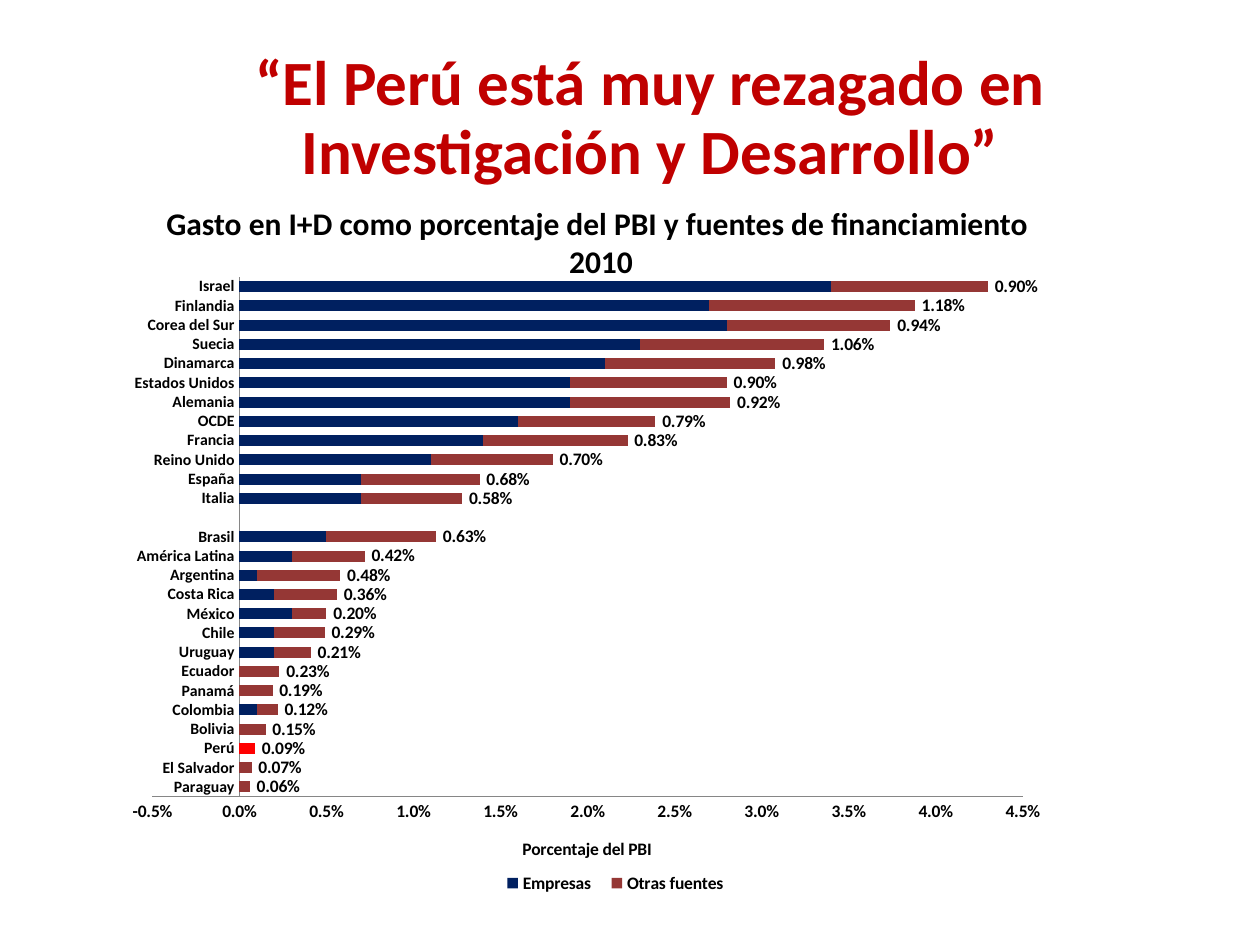
import pptx
import pptx.chart.data
import pptx.dml.color
import pptx.enum.chart
import pptx.enum.text
import pptx.oxml
import pptx.oxml.ns
import pptx.util

Inches = pptx.util.Inches
Pt = pptx.util.Pt
qn = pptx.oxml.ns.qn

ROWS = [
    ("Paraguay", 0.06, 0.06), ("El Salvador", 0.07, 0.07), ("Perú", 0.11, 0.09),
    ("Bolivia", 0.16, 0.15), ("Colombia", 0.19, 0.12), ("Panamá", 0.19, 0.19),
    ("Ecuador", 0.25, 0.23), ("Uruguay", 0.40, 0.21), ("Chile", 0.45, 0.29),
    ("México", 0.48, 0.20), ("Costa Rica", 0.54, 0.36), ("Argentina", 0.62, 0.48),
    ("América Latina", 0.76, 0.42), ("Brasil", 1.16, 0.63), ("", None, None),
    ("Italia", 1.26, 0.58), ("España", 1.40, 0.68), ("Reino Unido", 1.80, 0.70),
    ("Francia", 2.24, 0.83), ("OCDE", 2.37, 0.79), ("Alemania", 2.80, 0.92),
    ("Estados Unidos", 2.83, 0.90), ("Dinamarca", 3.07, 0.98), ("Suecia", 3.39, 1.06),
    ("Corea del Sur", 3.74, 0.94), ("Finlandia", 3.90, 1.18), ("Israel", 4.34, 0.90),
]
PLOT = {"x": 0.04, "y": 0.019, "w": 0.921, "h": 0.787}
AXIS_MIN, AXIS_MAX, AXIS_STEP = -0.005, 0.045, 0.005
LABEL_SHIFT = 0.03
LEADER_EXT = (
    f'<c:extLst {pptx.oxml.ns.nsdecls("c")}>'
    '<c:ext uri="{CE6537A1-D6FC-4f65-9D91-7224C49458BB}" '
    'xmlns:c15="http://schemas.microsoft.com/office/drawing/2012/chart">'
    '<c15:showLeaderLines val="0"/></c:ext></c:extLst>')


def rgb(value):
    return pptx.dml.color.RGBColor.from_string(value)


def share(percent, digits):
    return None if percent is None else round(percent / 100, digits)


def place(parent, before, inner=False, **box):
    for old in parent.findall(qn("c:layout")):
        parent.remove(old)
    modes = '<c:layoutTarget val="inner"/>' if inner else ""
    if before != "c:idx":
        modes += '<c:xMode val="edge"/><c:yMode val="edge"/>'
    sizes = "".join(f'<c:{key} val="{val}"/>' for key, val in box.items())
    layout = pptx.oxml.parse_xml(
        f'<c:layout {pptx.oxml.ns.nsdecls("c")}><c:manualLayout>{modes}{sizes}'
        "</c:manualLayout></c:layout>")
    if before is None:
        parent.insert(0, layout)
    else:
        parent.find(qn(before)).addnext(layout)


class Deck:
    font = "Calibri"
    black = "000000"
    grey = "868686"

    def __init__(self):
        self.prs = pptx.Presentation()
        self.prs.slide_width, self.prs.slide_height = Inches(10), Inches(7.5)
        self.s = self.prs.slides.add_slide(self.prs.slide_layouts[6])

    def style(self, font, size, color):
        font.name, font.size, font.bold = self.font, Pt(size), True
        font.color.rgb = rgb(color)

    def text(self, box, text, size, color, spacing=1.0):
        tf = self.s.shapes.add_textbox(*map(Inches, box)).text_frame
        tf.word_wrap = True
        tf.text = text
        for p in tf.paragraphs:
            p.alignment = pptx.enum.text.PP_ALIGN.CENTER
            p.line_spacing = spacing
            for r in p.runs:
                self.style(r.font, size, color)

    def axis(self, axis, size):
        axis.has_major_gridlines = False
        axis.major_tick_mark = axis.minor_tick_mark = pptx.enum.chart.XL_TICK_MARK.NONE
        axis.format.line.color.rgb = rgb(self.grey)
        axis.format.line.width = Pt(0.75)
        self.style(axis.tick_labels.font, size, self.black)

    def series(self, ser, color, accent, accent_idx):
        for fmt, fill in ((ser.format, color), (ser.points[accent_idx].format, accent)):
            fmt.fill.solid()
            fmt.fill.fore_color.rgb = rgb(fill)
        ser.invert_if_negative = False

    def end_labels(self, ser):
        labels = ser.data_labels
        labels.show_value = True
        labels.number_format, labels.number_format_is_linked = "0.00%", False
        self.style(labels.font, 10, self.black)
        dLbls = ser._element.find(qn("c:dLbls"))
        for i, value in enumerate(ser.values):
            if value is None:
                continue
            self.style(ser.points[i].data_label.font, 10, self.black)
            half_bar = value / (AXIS_MAX - AXIS_MIN) * PLOT["w"] / 2
            place(dLbls.findall(qn("c:dLbl"))[-1], "c:idx",
                  x=round(half_bar + LABEL_SHIFT, 4), y=0)
        for lines in dLbls.findall(qn("c:showLeaderLines")):
            lines.set("val", "0")
        dLbls.append(pptx.oxml.parse_xml(LEADER_EXT))

    def stacked_bars(self, box, rows, axis_title):
        data = pptx.chart.data.CategoryChartData(number_format="0.00%")
        data.categories = [name for name, _, _ in rows]
        data.add_series("Empresas", [share(total and total - other, 3)
                                     for _, total, other in rows])
        data.add_series("Otras fuentes", [share(other, 4) for _, _, other in rows])
        chart = self.s.shapes.add_chart(pptx.enum.chart.XL_CHART_TYPE.BAR_STACKED,
                                        *map(Inches, box), data).chart
        self.style(chart.font, 10, self.black)
        chart.has_title = False
        plot = chart.plots[0]
        plot.gap_width, plot.overlap, plot.vary_by_categories = 75, 100, False
        place(chart._chartSpace.chart.plotArea, None, inner=True, **PLOT)

        peru = [name for name, _, _ in rows].index("Perú")
        companies, others = plot.series
        self.series(companies, "002060", "00B0F0", peru)
        self.series(others, "953735", "FF0000", peru)
        self.end_labels(others)

        self.axis(chart.category_axis, 9)
        axis = chart.value_axis
        self.axis(axis, 10)
        axis.minimum_scale, axis.maximum_scale, axis.major_unit = AXIS_MIN, AXIS_MAX, AXIS_STEP
        axis.tick_labels.number_format = "0.0%"
        axis.tick_labels.number_format_is_linked = False
        tf = axis.axis_title.text_frame
        tf.text = axis_title
        self.style(tf.paragraphs[0].runs[0].font, 10, self.black)
        place(axis.axis_title._element, "c:tx", x=0.428, y=0.863)

        chart.has_legend = True
        legend = chart.legend
        legend.position = pptx.enum.chart.XL_LEGEND_POSITION.BOTTOM
        legend.include_in_layout = False
        self.style(legend.font, 10, self.black)
        place(legend._element, "c:legendPos", x=0.4, y=0.912, w=0.26, h=0.05)


def main():
    deck = Deck()
    deck.text((0.75, 0.36, 8.82, 1.19),
              "“El Perú está muy rezagado en Investigación y Desarrollo”", 36, "C00000", 0.9)
    deck.stacked_bars((0.91, 2.1, 7.5, 5.24), ROWS, "Porcentaje del PBI")
    deck.text((0.92, 1.57, 7.7, 0.71),
              "Gasto en I+D como porcentaje del PBI y fuentes de financiamiento \n2010",
              18, Deck.black)
    deck.prs.save("out.pptx")


if __name__ == "__main__":
    main()
